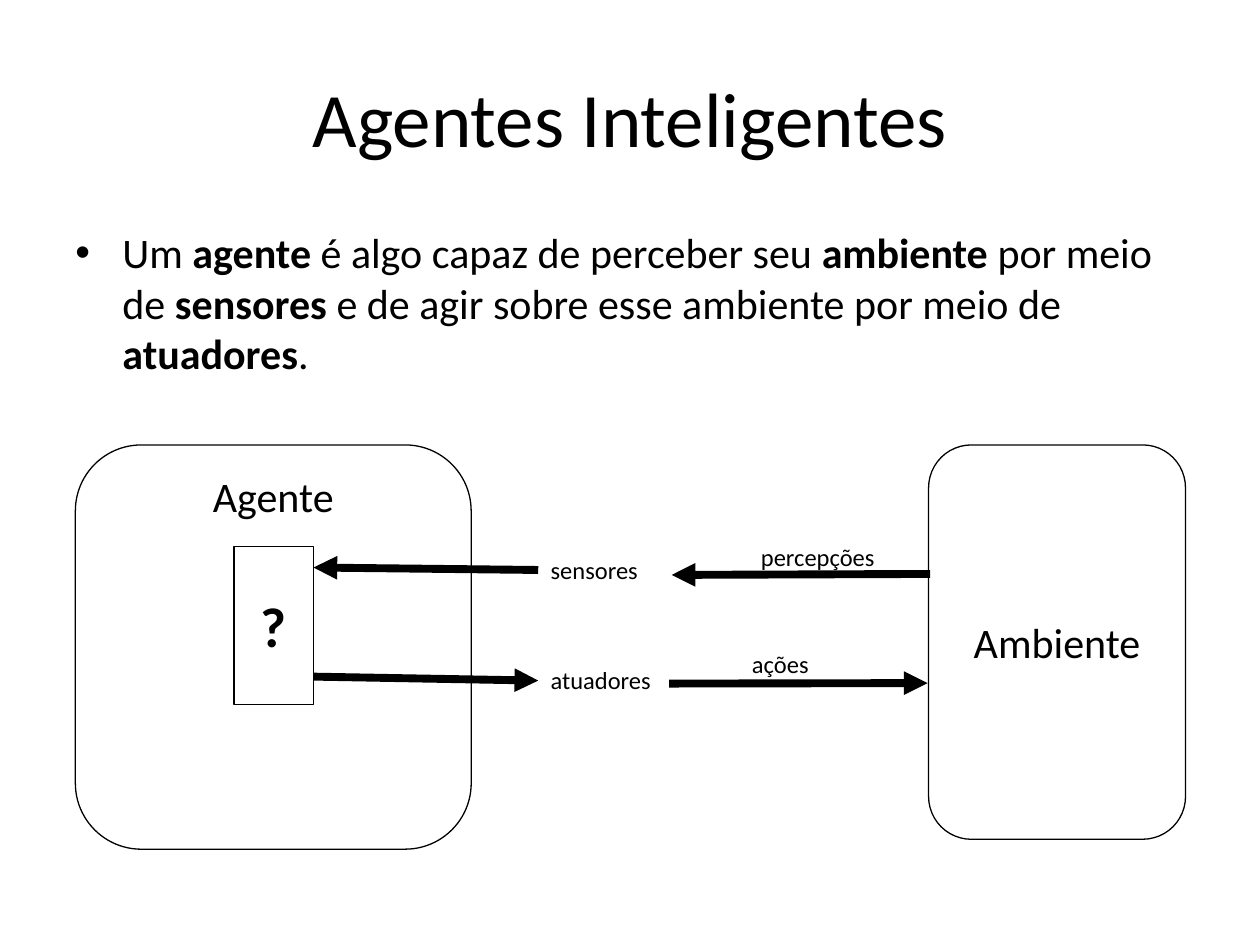
from dataclasses import dataclass

from lxml.etree import SubElement
from pptx import Presentation
from pptx.dml.color import RGBColor
from pptx.enum.shapes import MSO_CONNECTOR, MSO_SHAPE
from pptx.enum.text import MSO_ANCHOR, PP_ALIGN
from pptx.oxml.ns import qn
from pptx.util import Cm, Pt


@dataclass(frozen=True)
class Theme:
    """Colours, font and sizes of the slide."""

    ink: RGBColor = RGBColor(0, 0, 0)
    font: str = "Calibri"
    title: int = 44
    body: int = 24
    symbol: int = 32
    label: int = 14
    outline: float = 0.75
    arrow: float = 4.5


def assign(target, values):
    """Set each attribute named in values."""
    for name, value in values.items():
        setattr(target, name, value)


class DiagramSlide:
    """Draws the parts of an agent diagram on one slide."""

    def __init__(self, slide, theme):
        """Keep the slide and its style."""
        self.slide = slide
        self.theme = theme

    def add_text(self, shape, runs, size, align=PP_ALIGN.LEFT, anchor=MSO_ANCHOR.TOP):
        """Fill the shape with one paragraph of (text, bold) runs."""
        frame = shape.text_frame
        assign(frame, {"word_wrap": True, "vertical_anchor": anchor})
        paragraph = frame.paragraphs[0]
        paragraph.alignment = align
        for text, bold in runs:
            run = paragraph.add_run()
            run.text = text
            assign(run.font, {"name": self.theme.font, "size": Pt(size), "bold": bold})
            run.font.color.rgb = self.theme.ink
        return paragraph

    def title(self, text, box):
        """Place and fill the title placeholder."""
        shape = self.slide.shapes.title
        assign(shape, dict(zip(("left", "top", "width", "height"), map(Cm, box))))
        self.add_text(shape, [(text, False)], self.theme.title, PP_ALIGN.CENTER, MSO_ANCHOR.MIDDLE)

    def bullet(self, runs, box, indent):
        """Add a bulleted paragraph with a hanging indent."""
        shape = self.slide.shapes.add_textbox(*map(Cm, box))
        paragraph = self.add_text(shape, runs, self.theme.body)
        properties = paragraph._p.get_or_add_pPr()
        properties.set("marL", str(int(Cm(indent))))
        properties.set("indent", str(-int(Cm(indent))))
        SubElement(properties, qn("a:buFont"), typeface="Arial")
        SubElement(properties, qn("a:buChar"), char="•")

    def box(self, kind, text, box, size, anchor=MSO_ANCHOR.MIDDLE, bold=False):
        """Add an outlined shape with centred text."""
        shape = self.slide.shapes.add_shape(kind, *map(Cm, box))
        shape.shadow.inherit = False
        shape.fill.background()
        shape.line.color.rgb = self.theme.ink
        shape.line.width = Pt(self.theme.outline)
        self.add_text(shape, [(text, bold)], size, PP_ALIGN.CENTER, anchor)

    def label(self, text, left, top, width):
        """Add a small text label."""
        shape = self.slide.shapes.add_textbox(*map(Cm, (left, top, width, 0.86)))
        self.add_text(shape, [(text, False)], self.theme.label)

    def arrow(self, start, end):
        """Add a thick arrow that points at its end."""
        connector = self.slide.shapes.add_connector(
            MSO_CONNECTOR.STRAIGHT, *map(Cm, (*start, *end))
        )
        connector.line.color.rgb = self.theme.ink
        connector.line.width = Pt(self.theme.arrow)
        properties = connector._element.spPr
        SubElement(properties.find(qn("a:ln")), qn("a:tailEnd"), type="triangle")
        SubElement(properties, qn("a:effectLst"))


def main():
    """Build the slide and save it."""
    presentation = Presentation()
    assign(presentation, {"slide_width": Cm(25.4), "slide_height": Cm(19.05)})
    theme = Theme()
    diagram = DiagramSlide(presentation.slides.add_slide(presentation.slide_layouts[5]), theme)

    diagram.title("Agentes Inteligentes", (1.27, 0.76, 22.86, 3.18))
    definition = [
        ("Um ", False),
        ("agente", True),
        (" é algo capaz de perceber seu ", False),
        ("ambiente", True),
        (" por meio de ", False),
        ("sensores", True),
        (" e de agir sobre esse ambiente por meio de ", False),
        ("atuadores", True),
        (".", False),
    ]
    diagram.bullet(definition, (1.27, 4.45, 22.86, 12.57), 0.95)

    rounded = MSO_SHAPE.ROUNDED_RECTANGLE
    diagram.box(rounded, "Agente", (1.52, 8.97, 7.98, 8.15), theme.body, MSO_ANCHOR.TOP)
    diagram.box(rounded, "Ambiente", (18.72, 8.97, 5.18, 7.95), theme.body)
    diagram.box(MSO_SHAPE.RECTANGLE, "?", (4.72, 11.02, 1.6, 3.18), theme.symbol, bold=True)

    for text, left, top, width in (
        ("sensores", 10.85, 11.07, 2.64),
        ("atuadores", 10.85, 13.28, 2.64),
        ("percepções", 15.09, 10.8, 3.2),
        ("ações", 14.91, 12.95, 2.79),
    ):
        diagram.label(text, left, top, width)

    for start, end in (
        ((18.75, 11.57), (13.54, 11.59)),
        ((10.85, 11.49), (6.32, 11.44)),
        ((6.32, 13.64), (10.85, 13.72)),
        ((13.49, 13.78), (18.7, 13.77)),
    ):
        diagram.arrow(start, end)

    presentation.save("out.pptx")


if __name__ == "__main__":
    main()
